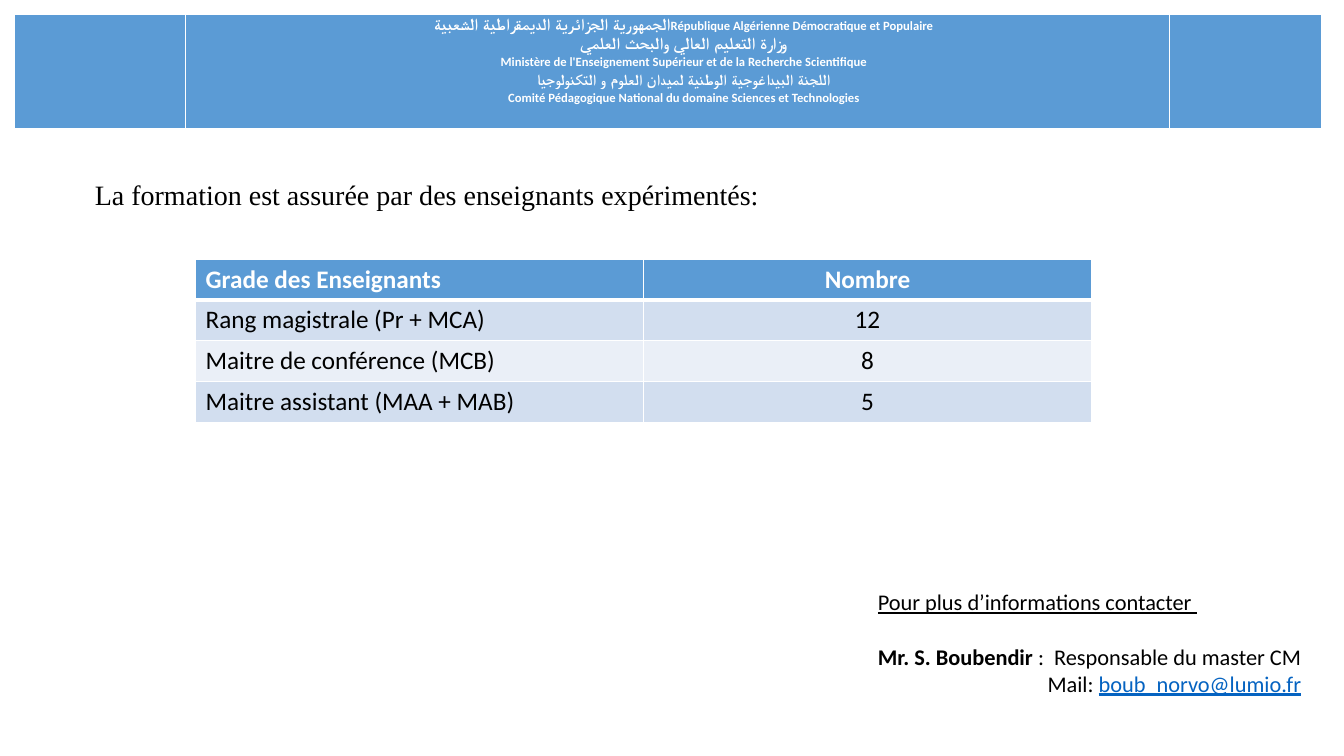
import pptx
import pptx.dml.color
import pptx.enum.text
import pptx.oxml
import pptx.oxml.ns
import pptx.util

Pt = pptx.util.Pt
RGBColor = pptx.dml.color.RGBColor
PP_ALIGN = pptx.enum.text.PP_ALIGN

WHITE = RGBColor(0xFF, 0xFF, 0xFF)
BLACK = RGBColor(0x00, 0x00, 0x00)
HEADER_BLUE = RGBColor(0x5B, 0x9B, 0xD5)
BAND_DARK = RGBColor(0xD2, 0xDE, 0xEF)
BAND_LIGHT = RGBColor(0xEA, 0xEF, 0xF7)
LINK_BLUE = RGBColor(0x05, 0x63, 0xC1)

BANNER_LINES = [
    [("الجمهورية الجزائرية الديمقراطية الشعبية", 12),
     ("République Algérienne Démocratique et Populaire", 9)],
    [("وزارة التعليم العالي والبحث العلمي", 12)],
    [("Ministère de l'Enseignement Supérieur et de la Recherche Scientifique", 9)],
    [("اللجنة البيداغوجية الوطنية لميدان العلوم و التكنولوجيا", 11)],
    [("Comité Pédagogique National du domaine Sciences et Technologies", 9)],
]
STAFF_ROWS = [
    ("Grade des Enseignants", "Nombre"),
    ("Rang magistrale (Pr + MCA)", "12"),
    ("Maitre de conférence (MCB)", "8"),
    ("Maitre assistant (MAA + MAB)", "5"),
]


def format_run(run, size, color=BLACK, bold=False, underline=False, name="Calibri"):
    font = run.font
    font.name = name
    font.size = Pt(size)
    font.bold = bold
    font.underline = underline
    font.color.rgb = color


def add_run(paragraph, text, size, **style):
    run = paragraph.add_run()
    run.text = text
    format_run(run, size, **style)


def next_paragraph(text_frame, index):
    """Return the first paragraph for index 0, and a new one after that."""
    return text_frame.add_paragraph() if index else text_frame.paragraphs[0]


def paint_cell(cell, color, bottom_width=1):
    """Fill a cell and give it white borders."""
    properties = cell._tc.get_or_add_tcPr()
    for side in ("lnL", "lnR", "lnT", "lnB"):
        width = Pt(bottom_width if side == "lnB" else 1)
        properties.append(pptx.oxml.parse_xml(
            f'<a:{side} {pptx.oxml.ns.nsdecls("a")} w="{width}"><a:solidFill>'
            f'<a:srgbClr val="{WHITE}"/></a:solidFill></a:{side}>'))
    cell.fill.solid()
    cell.fill.fore_color.rgb = color


def add_table(slide, left, top, column_widths, row_height, row_count):
    table = slide.shapes.add_table(
        row_count, len(column_widths), Pt(left), Pt(top),
        Pt(sum(column_widths)), Pt(row_height * row_count)).table
    for column, width in zip(table.columns, column_widths):
        column.width = Pt(width)
    return table


def add_banner(slide):
    table = add_table(slide, 10.1, 10.1, (122.4, 702.7, 108.7), 82.8, 1)
    for cell in table.iter_cells():
        paint_cell(cell, HEADER_BLUE, bottom_width=3)
    cell = table.cell(0, 1)
    cell.margin_left = cell.margin_right = Pt(5)
    cell.margin_top = cell.margin_bottom = Pt(0)
    for index, pieces in enumerate(BANNER_LINES):
        paragraph = next_paragraph(cell.text_frame, index)
        paragraph.alignment = PP_ALIGN.CENTER
        paragraph.line_spacing = 1.15
        properties = paragraph._p.get_or_add_pPr()
        properties.set("marL", str(Pt(18)))
        properties.set("indent", str(Pt(-9)))
        for text, size in pieces:
            add_run(paragraph, text, size, color=WHITE, bold=True)


def add_title(slide):
    title = slide.shapes.title
    title.left, title.top, title.width, title.height = (
        Pt(60.5), Pt(123.1), Pt(491.8), Pt(31.7))
    text_frame = title.text_frame
    text_frame.text = "La formation est assurée par des enseignants expérimentés:"
    text_frame.word_wrap = False
    text_frame.auto_size = pptx.enum.text.MSO_AUTO_SIZE.SHAPE_TO_FIT_TEXT
    text_frame.vertical_anchor = pptx.enum.text.MSO_ANCHOR.TOP
    paragraph = text_frame.paragraphs[0]
    paragraph.alignment = PP_ALIGN.LEFT
    format_run(paragraph.runs[0], 20, name="Times New Roman")


def add_staff_table(slide):
    table = add_table(slide, 139.7, 185, (320, 320), 29.2, len(STAFF_ROWS))
    for row_index, values in enumerate(STAFF_ROWS):
        is_header = row_index == 0
        band = BAND_DARK if row_index % 2 else BAND_LIGHT
        for column_index, value in enumerate(values):
            cell = table.cell(row_index, column_index)
            paint_cell(cell, HEADER_BLUE if is_header else band, 3 if is_header else 1)
            paragraph = cell.text_frame.paragraphs[0]
            paragraph.text = value
            paragraph.alignment = PP_ALIGN.CENTER if column_index else PP_ALIGN.LEFT
            format_run(paragraph.runs[0], 18, WHITE if is_header else BLACK, is_header)


def add_contact(slide):
    box = slide.shapes.add_textbox(Pt(619.9), Pt(416.9), Pt(320.4), Pt(104.4))
    text_frame = box.text_frame
    text_frame.word_wrap = False
    heading, person, mail = (next_paragraph(text_frame, index) for index in range(3))
    heading.alignment = PP_ALIGN.LEFT
    add_run(heading, "Pour plus d’informations contacter ", 16, underline=True)
    person.alignment = PP_ALIGN.CENTER
    person.space_before = Pt(19.5)
    add_run(person, "Mr. S. Boubendir ", 16, bold=True)
    add_run(person, ":  Responsable du master CM", 16)
    mail.alignment = PP_ALIGN.RIGHT
    add_run(mail, "Mail: ", 16)
    add_run(mail, "boub_norvo@lumio.fr", 16, color=LINK_BLUE, underline=True)


def main():
    presentation = pptx.Presentation()
    presentation.slide_width = Pt(960)
    presentation.slide_height = Pt(540)
    slide = presentation.slides.add_slide(presentation.slide_layouts[5])
    add_banner(slide)
    add_title(slide)
    add_staff_table(slide)
    add_contact(slide)
    presentation.save("out.pptx")


if __name__ == "__main__":
    main()
